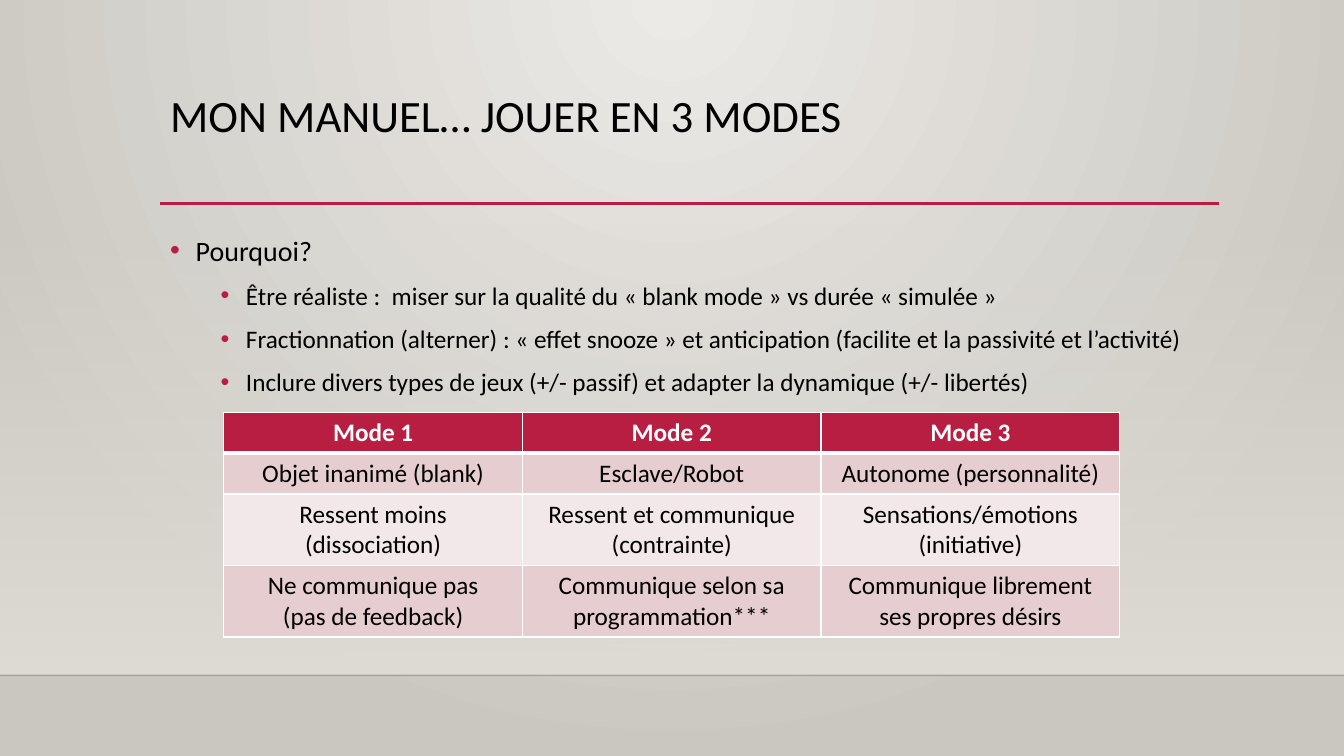
from pptx import Presentation
from pptx.dml.color import RGBColor as Rgb
from pptx.enum.shapes import MSO_CONNECTOR as Conn, MSO_SHAPE as Form
from pptx.enum.text import PP_ALIGN as Align
from pptx.oxml import parse_xml as to_xml
from pptx.oxml.ns import nsdecls, qn
from pptx.util import Cm, Pt

RED, WHITE, BLACK, SAND = "B71E42", "FFFFFF", "000000", "DFDBD5"
PINK, PALE = "E6CDCF", "F3E8E9"


def color(code):
    return Rgb.from_string(code)


def node(tag, inner="", attrs=""):
    return to_xml(f"<a:{tag} {nsdecls('a')} {attrs}>{inner}</a:{tag}>")


def paint(code, alpha=100):
    return f'<a:srgbClr val="{code}"><a:alpha val="{alpha * 1000}"/></a:srgbClr>'


def put(item, values):
    for name, value in values.items():
        setattr(item, name, value)


class Deck:
    font = "Calibri"

    def __init__(self, wide, high):
        self.prs = Presentation()
        put(self.prs, {"slide_width": Cm(wide), "slide_height": Cm(high)})
        self.slide = self.prs.slides.add_slide(self.prs.slide_layouts[6])
        self.shapes = self.slide.shapes

    def blend(self, fill, root, stops, shade):
        fill.gradient()
        old = next(root.iter(qn("a:gradFill")))
        marks = "".join(f'<a:gs pos="{pos * 1000}">{paint(*stop)}</a:gs>'
                        for pos, stop in stops)
        new = node("gradFill", f"<a:gsLst>{marks}</a:gsLst>{shade}", 'rotWithShape="1"')
        old.getparent().replace(old, new)

    def back(self, stops, shade):
        self.blend(self.slide.background.fill, self.slide.element, stops, shade)

    def band(self, box, stops, shade):
        shape = self.shapes.add_shape(Form.RECTANGLE, *map(Cm, box))
        shape.shadow.inherit = False
        shape.line.fill.background()
        self.blend(shape.fill, shape.element, stops, shade)

    def rule(self, left, right, top, code, width, alpha=100):
        line = self.shapes.add_connector(Conn.STRAIGHT, Cm(left), Cm(top), Cm(right), Cm(top))
        line.line.width = Pt(width)
        line.line.color.rgb = color(code)
        tint = next(line.element.iter(qn("a:srgbClr")))
        tint.append(node("alpha", attrs=f'val="{alpha * 1000}"'))
        line.element.spPr.append(node("effectLst"))

    def ink(self, para, text, size, code=BLACK, bold=False):
        run = para.add_run()
        run.text = text
        put(run.font, {"name": self.font, "size": Pt(size), "bold": bold})
        run.font.color.rgb = color(code)

    def frame(self, box):
        frame = self.shapes.add_textbox(*map(Cm, box)).text_frame
        frame.word_wrap = True
        return frame

    def title(self, box, text):
        para = self.frame(box).paragraphs[0]
        para.line_spacing = 0.9
        self.ink(para, text, 32)

    def points(self, box, items):
        frame = self.frame(box)
        for i, (level, text) in enumerate(items):
            para = frame.add_paragraph() if i else frame.paragraphs[0]
            put(para, {"level": level, "line_spacing": 1.2, "space_before": Pt(5 if i else 0)})
            props = para._p.get_or_add_pPr()
            props.set("marL", str(Cm(0.64 + 1.27 * level)))
            props.set("indent", str(Cm(-0.64)))
            props.append(node("buClr", paint(RED)))
            props.append(node("buFont", attrs='typeface="Arial"'))
            props.append(node("buChar", attrs='char="•"'))
            self.ink(para, text, 20 - 2 * level)

    def edge(self, cell, sides):
        props = cell._tc.get_or_add_tcPr()
        for side, width in sides.items():
            props.append(node(f"ln{side}", f"<a:solidFill>{paint(WHITE)}</a:solidFill>",
                              f'w="{Pt(width)}"'))

    def table(self, box, highs, rows):
        table = self.shapes.add_table(len(rows), len(rows[0]), *map(Cm, box)).table
        for r, (high, row) in enumerate(zip(highs, rows)):
            table.rows[r].height = Cm(high)
            head = r == 0
            for c, text in enumerate(row):
                cell = table.cell(r, c)
                self.edge(cell, {"L": 1, "R": 1, "T": 3 if r == 1 else 1, "B": 3 if head else 1})
                cell.fill.solid()
                cell.fill.fore_color.rgb = color(RED if head else PINK if r % 2 else PALE)
                for i, part in enumerate(text.split("\n")):
                    frame = cell.text_frame
                    para = frame.add_paragraph() if i else frame.paragraphs[0]
                    para.alignment = Align.CENTER
                    self.ink(para, part, 18, WHITE if head else BLACK, head)


def main():
    wide, left = 33.87, 4.04
    deck = Deck(wide, 19.05)

    # Backdrop and floor
    deck.back([(0, ("ECEAE7",)), (100, ("CAC7C1",))],
              '<a:path path="circle"><a:fillToRect l="43000" t="0" r="43000" b="100000"/></a:path>')
    deck.band((0, 5.61, wide, 11.4), [(0, (SAND, 0)), (100, (SAND,))],
              '<a:lin ang="5400000" scaled="0"/>')
    deck.rule(0, wide, 17.02, "000001", 1, 20)

    # Title
    deck.rule(left, 30.73, 5.13, RED, 2.5)
    deck.title((left, 2.24, 26.67, 2.92), "MON MANUEL… JOUER EN 3 MODES")

    # Reasons
    deck.points((left, 5.59, 26.67, 9.58), [
        (0, "Pourquoi?"),
        (1, "Être réaliste :  miser sur la qualité du « blank mode » vs durée « simulée »"),
        (1, "Fractionnation (alterner) : « effet snooze » et anticipation "
            "(facilite et la passivité et l’activité)"),
        (1, "Inclure divers types de jeux (+/- passif) et adapter la dynamique (+/- libertés)"),
    ])

    # Modes
    deck.table((5.64, 10.4, 22.58, 5.65), (1.02, 1.03, 1.8, 1.8), [
        ("Mode 1", "Mode 2", "Mode 3"),
        ("Objet inanimé (blank)", "Esclave/Robot", "Autonome (personnalité)"),
        ("Ressent moins (dissociation)", "Ressent et communique\n(contrainte)",
         "Sensations/émotions\n(initiative)"),
        ("Ne communique pas\n(pas de feedback)", "Communique selon sa programmation***",
         "Communique librement ses propres désirs"),
    ])
    deck.prs.save("out.pptx")


if __name__ == "__main__":
    main()
